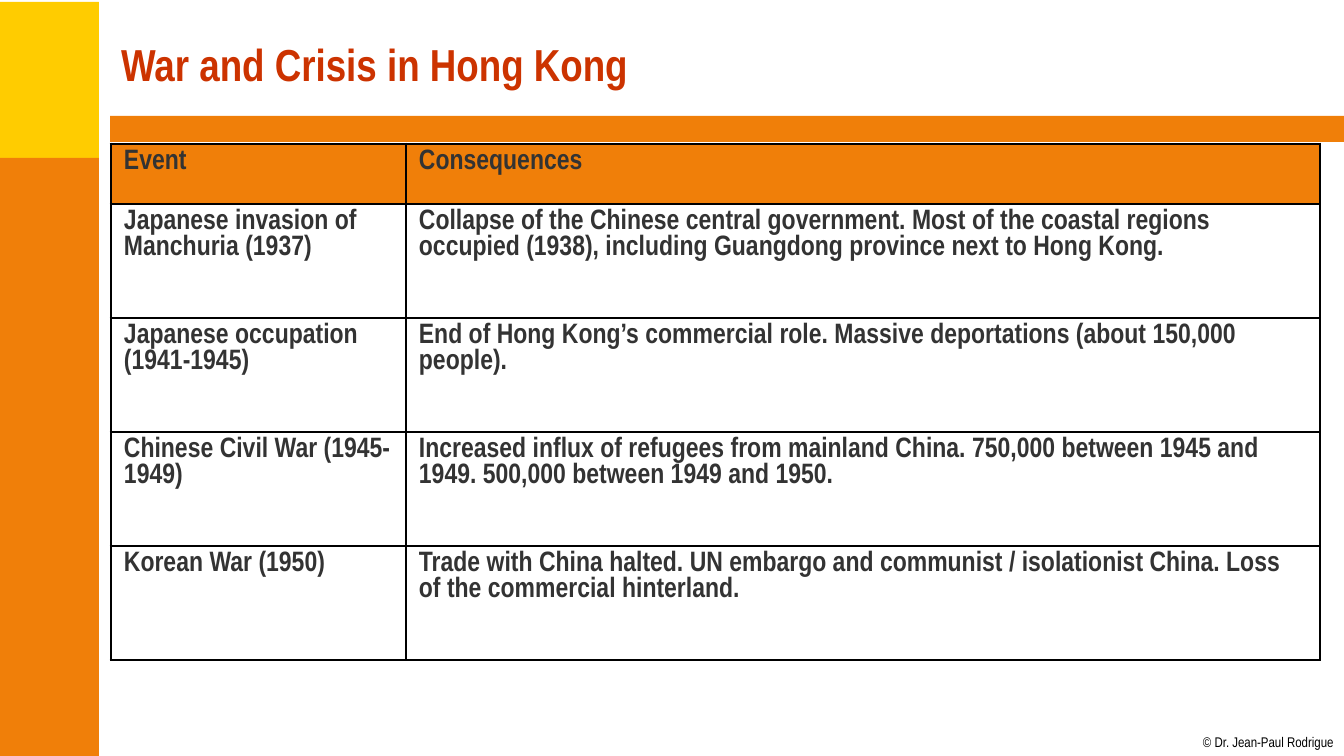
from lxml.etree import SubElement
from pptx import Presentation
from pptx.dml.color import RGBColor
from pptx.enum.shapes import MSO_SHAPE as SHAPE
from pptx.enum.text import MSO_ANCHOR as ANCHOR, MSO_AUTO_SIZE as AUTOSIZE, PP_ALIGN as ALIGN
from pptx.oxml.ns import qn
from pptx.util import Emu, Pt

EMU_PER_PX = 914400 / 100.8
FONT = "Arial Narrow"
COLORS = {
    "yellow": "FFCC00",
    "orange": "F07F09",
    "title": "CC3300",
    "text": "333333",
    "black": "000000",
}
BANDS = [
    (-2, 2, 101, 159, "yellow"),
    (-2, 158, 101, 598, "orange"),
    (110, 116, 1234, 26, "orange"),
]
EVENTS = [
    ("Event", "Consequences"),
    ("Japanese invasion of Manchuria (1937)",
     "Collapse of the Chinese central government. Most of the coastal regions "
     "occupied (1938), including Guangdong province next to Hong Kong."),
    ("Japanese occupation (1941-1945)",
     "End of Hong Kong’s commercial role. Massive deportations (about 150,000 people)."),
    ("Chinese Civil War (1945-1949)",
     "Increased influx of refugees from mainland China. 750,000 between 1945 and 1949. "
     "500,000 between 1949 and 1950."),
    ("Korean War (1950)",
     "Trade with China halted. UN embargo and communist / isolationist China. "
     "Loss of the commercial hinterland."),
]
COL_WIDTHS = [295, 914]
HEADER_HEIGHT, ROW_HEIGHT = 60, 114
THIN, THICK = 1, 2.25


def px(n):
    return Emu(round(n * EMU_PER_PX))


def rgb(name):
    return RGBColor.from_string(COLORS[name])


def style_text(tf, size, color, bold=False):
    for p in tf.paragraphs:
        for r in p.runs:
            r.font.name = FONT
            r.font.size = Pt(size)
            r.font.bold = bold
            r.font.color.rgb = rgb(color)


def add_band(s, x, y, w, h, color):
    band = s.shapes.add_shape(SHAPE.RECTANGLE, px(x), px(y), px(w), px(h))
    band.shadow.inherit = False
    band.fill.solid()
    band.fill.fore_color.rgb = rgb(color)
    band.line.fill.background()


def set_title(s, text):
    sp = s.shapes.title
    sp.left, sp.top, sp.width, sp.height = px(111), px(11), px(1210), px(105)
    tf = sp.text_frame
    tf.text = text
    tf.auto_size = AUTOSIZE.NONE
    tf.vertical_anchor = ANCHOR.MIDDLE
    tf.paragraphs[0].alignment = ALIGN.LEFT
    style_text(tf, 32, "title", bold=True)


def add_credit(s, text):
    tf = s.shapes.add_textbox(px(1203), px(734), px(132), px(17)).text_frame
    tf.margin_left = tf.margin_right = tf.margin_top = tf.margin_bottom = 0
    tf.word_wrap = False
    tf.auto_size = AUTOSIZE.SHAPE_TO_FIT_TEXT
    tf.text = text
    style_text(tf, 10, "black")


def set_borders(cell, left, right, top, bottom):
    tc_pr = cell._tc.get_or_add_tcPr()
    for side, width in zip("LRTB", (left, right, top, bottom)):
        ln = SubElement(tc_pr, qn(f"a:ln{side}"), w=str(int(Pt(width))), cap="flat", cmpd="sng")
        fill = SubElement(ln, qn("a:solidFill"))
        SubElement(fill, qn("a:srgbClr"), val=COLORS["black"])
        SubElement(ln, qn("a:prstDash"), val="solid")


def fill_cell(cell, text, header):
    cell.margin_left = cell.margin_right = px(13)
    cell.margin_top = cell.margin_bottom = px(5)
    cell.vertical_anchor = ANCHOR.TOP
    if header:
        cell.fill.solid()
        cell.fill.fore_color.rgb = rgb("orange")
    else:
        cell.fill.background()
    tf = cell.text_frame
    tf.text = text
    tf.paragraphs[0].line_spacing = 1.0
    style_text(tf, 20, "text", bold=True)


def add_event_table(s, rows):
    last_row, last_col = len(rows) - 1, len(COL_WIDTHS) - 1
    height = HEADER_HEIGHT + last_row * ROW_HEIGHT
    table = s.shapes.add_table(len(rows), len(COL_WIDTHS), px(111), px(144),
                               px(sum(COL_WIDTHS)), px(height)).table
    table.first_row = table.horz_banding = False
    for col, width in zip(table.columns, COL_WIDTHS):
        col.width = px(width)
    for i, row in enumerate(rows):
        table.rows[i].height = px(ROW_HEIGHT if i else HEADER_HEIGHT)
        for j, text in enumerate(row):
            cell = table.cell(i, j)
            # Thick lines around the table, thin lines inside
            set_borders(cell, THIN if j else THICK, THICK if j == last_col else THIN,
                        THIN if i else THICK, THICK if i == last_row else THIN)
            fill_cell(cell, text, header=i == 0)


def main():
    prs = Presentation()
    prs.slide_width, prs.slide_height = px(1344), px(756)
    s = prs.slides.add_slide(prs.slide_layouts[5])

    # Colour bands and credit
    for band in BANDS:
        add_band(s, *band)
    add_credit(s, "© Dr. Jean-Paul Rodrigue")

    # Title and table
    set_title(s, "War and Crisis in Hong Kong")
    add_event_table(s, EVENTS)

    prs.save("out.pptx")


if __name__ == "__main__":
    main()
